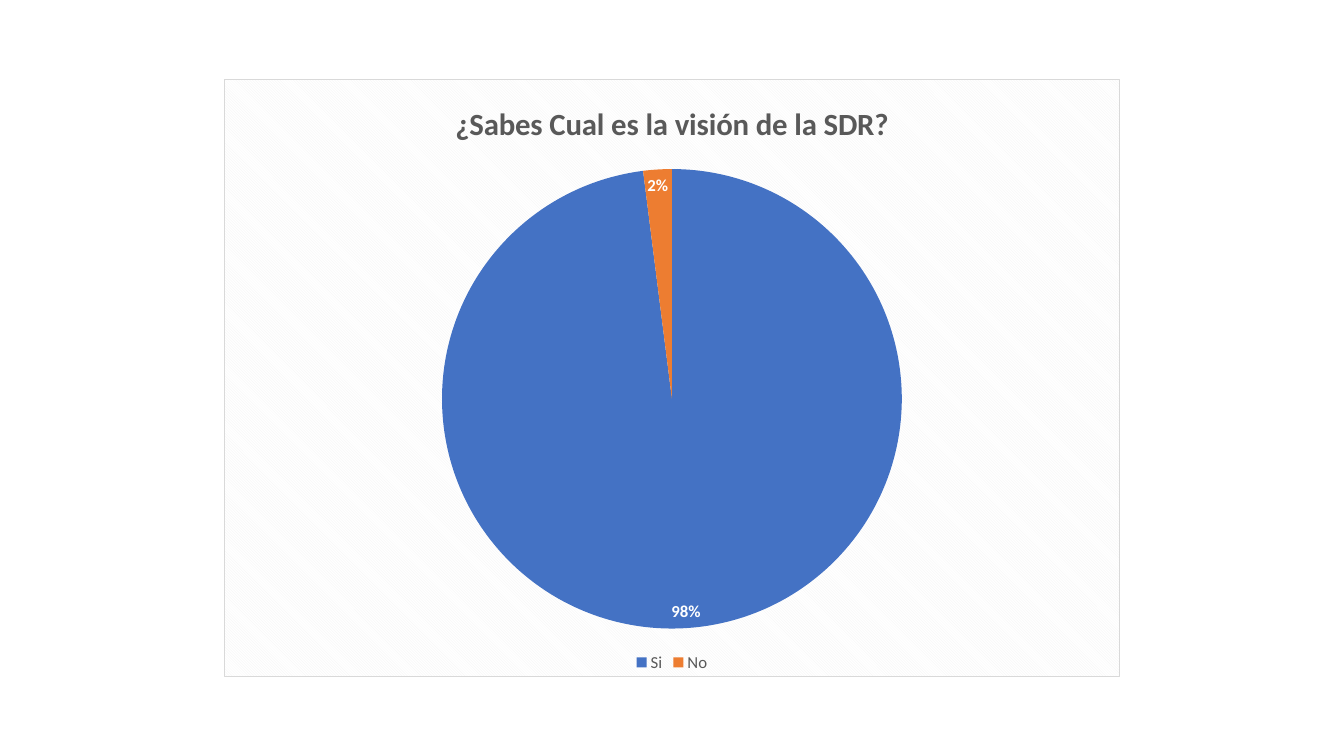
import pptx
import pptx.chart.data
import pptx.dml.color
import pptx.enum.chart
import pptx.oxml
import pptx.oxml.ns
import pptx.util

Pt = pptx.util.Pt

QUESTION = "¿Sabes Cual es la visión de la SDR?"
ANSWERS = {"Si": 98, "No": 2}

SLIDE = (960, 540)
CHART_SIZE = (640, 427)
PLOT = {"x": 0.24, "y": 0.15, "w": 0.52, "h": 0.77}

THEME = {
    "slices": ["4472C4", "ED7D31"],
    "pattern": ("dkDnDiag", "F2F2F2", "FFFFFF"),
    "border": ("D9D9D9", 0.75),
    "base": {"name": "Calibri", "size": Pt(10), "color": "000000"},
    "title": {"name": "Calibri", "size": Pt(22), "bold": True, "color": "595959"},
    "legend": {"name": "Calibri", "size": Pt(12), "color": "595959"},
    "labels": {"name": "Calibri", "size": Pt(12), "bold": True, "color": "FFFFFF"},
}


def rgb(value):
    return pptx.dml.color.RGBColor.from_string(value)


def style(font, values):
    for key, value in values.items():
        if key == "color":
            font.color.rgb = rgb(value)
        else:
            setattr(font, key, value)


def parse_xml(body):
    return pptx.oxml.parse_xml(body.replace(">", " " + pptx.oxml.ns.nsdecls("c", "a") + ">", 1))


def style_chart_area(chart):
    """Give the chart area its striped fill and thin border."""
    pattern, front, back = THEME["pattern"]
    color, width = THEME["border"]
    area = parse_xml(
        f'<c:spPr><a:pattFill prst="{pattern}">'
        f'<a:fgClr><a:srgbClr val="{front}"/></a:fgClr>'
        f'<a:bgClr><a:srgbClr val="{back}"/></a:bgClr></a:pattFill>'
        f'<a:ln w="{int(Pt(width))}"><a:solidFill><a:srgbClr val="{color}"/></a:solidFill></a:ln>'
        "</c:spPr>"
    )
    chart.element.find(pptx.oxml.ns.qn("c:chart")).addnext(area)


def place_plot(chart):
    """Fix the inner plot area as fractions of the chart."""
    modes = '<c:xMode val="edge"/><c:yMode val="edge"/>'
    sizes = "".join(f'<c:{key} val="{value}"/>' for key, value in PLOT.items())
    layout = parse_xml(
        '<c:layout><c:manualLayout><c:layoutTarget val="inner"/>'
        f"{modes}{sizes}</c:manualLayout></c:layout>"
    )
    plot_area = next(chart.element.iter(pptx.oxml.ns.qn("c:plotArea")))
    for old in plot_area.findall(pptx.oxml.ns.qn("c:layout")):
        plot_area.remove(old)
    plot_area.insert(0, layout)


def add_pie(s):
    data = pptx.chart.data.CategoryChartData()
    data.categories = list(ANSWERS)
    data.add_series(QUESTION, list(ANSWERS.values()))
    left, top = ((outer - inner) / 2 for outer, inner in zip(SLIDE, CHART_SIZE))
    box = [Pt(value) for value in (left, top, *CHART_SIZE)]
    chart = s.shapes.add_chart(pptx.enum.chart.XL_CHART_TYPE.PIE, *box, data).chart
    style(chart.font, THEME["base"])

    chart.has_title = True
    chart.chart_title.include_in_layout = False
    p = chart.chart_title.text_frame.paragraphs[0]
    r = p.add_run()
    r.text = QUESTION
    style(r.font, THEME["title"])

    chart.has_legend = True
    chart.legend.position = pptx.enum.chart.XL_LEGEND_POSITION.BOTTOM
    chart.legend.include_in_layout = False
    style(chart.legend.font, THEME["legend"])

    plot = chart.plots[0]
    plot.vary_by_categories = True
    series = plot.series[0]
    for i, color in enumerate(THEME["slices"]):
        fill = series.points[i].format.fill
        fill.solid()
        fill.fore_color.rgb = rgb(color)

    labels = series.data_labels
    label_values = {
        "show_percentage": True,
        "show_value": False,
        "number_format": "0%",
        "number_format_is_linked": False,
        "position": pptx.enum.chart.XL_LABEL_POSITION.INSIDE_END,
    }
    for key, value in label_values.items():
        setattr(labels, key, value)
    style(labels.font, THEME["labels"])

    style_chart_area(chart)
    place_plot(chart)


def main():
    prs = pptx.Presentation()
    prs.slide_width, prs.slide_height = (Pt(value) for value in SLIDE)
    s = prs.slides.add_slide(prs.slide_layouts[6])
    add_pie(s)
    prs.save("out.pptx")


if __name__ == "__main__":
    main()
